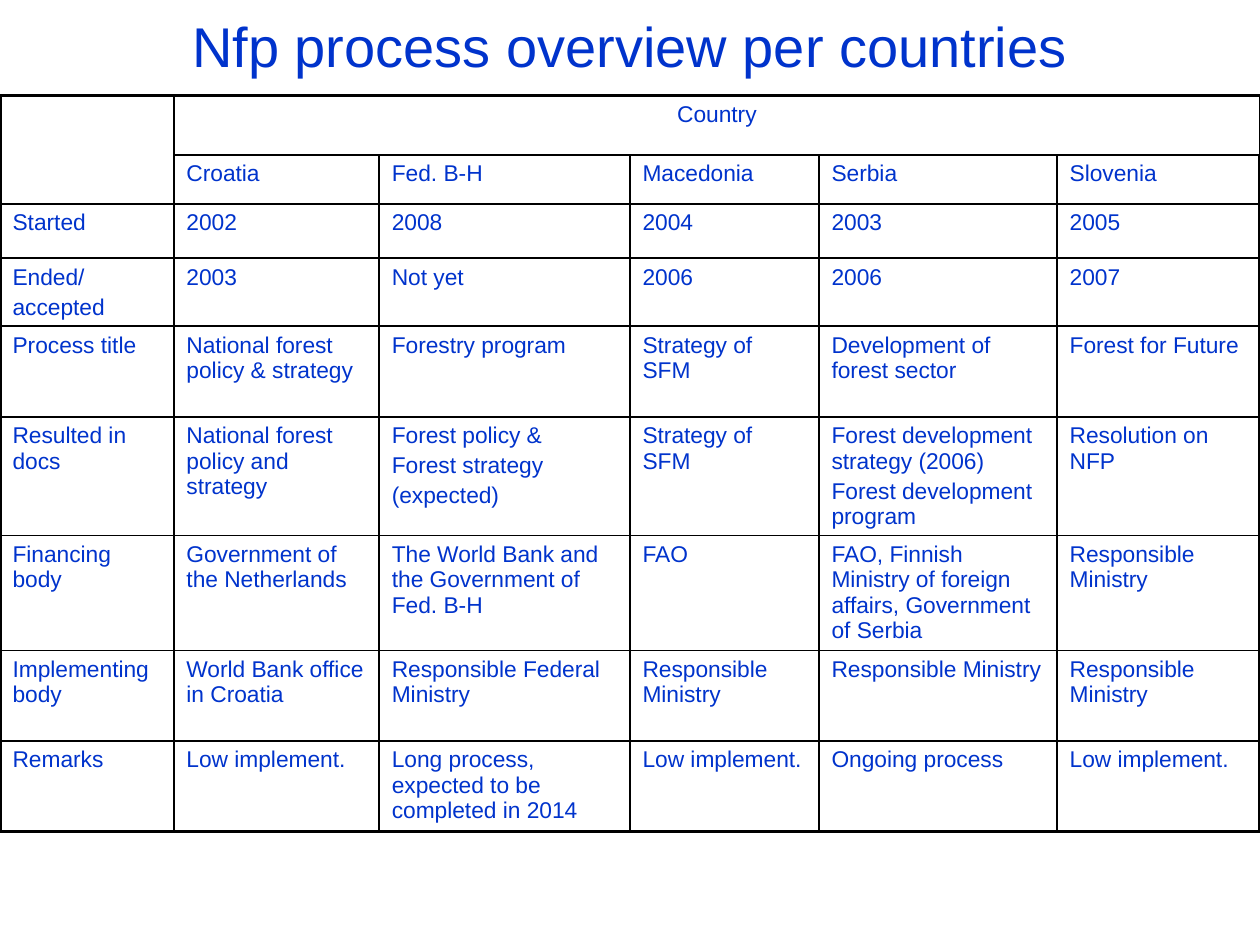
from lxml.etree import SubElement
from pptx import Presentation
from pptx.dml.color import RGBColor
from pptx.enum.text import MSO_ANCHOR, PP_ALIGN
from pptx.oxml.ns import qn
from pptx.util import Inches, Pt

COLORS = {"text": "0033CC", "border": "000000"}
FONT = "Arial"
THICK, THIN = 2.25, 1
COL_WIDTHS = [1.38, 1.63, 1.99, 1.5, 1.89, 1.61]
ROW_HEIGHTS = [0.47, 0.39, 0.43, 0.54, 0.72, 0.94, 0.91, 0.72, 0.72]
ROWS = [
    ["", "Country", "", "", "", ""],
    ["", "Croatia", "Fed. B-H", "Macedonia", "Serbia", "Slovenia"],
    ["Started", "2002", "2008", "2004", "2003", "2005"],
    ["Ended/\naccepted", "2003", "Not yet", "2006", "2006", "2007"],
    ["Process title", "National forest policy & strategy", "Forestry program",
     "Strategy of SFM", "Development of forest sector", "Forest for Future"],
    ["Resulted in docs", "National forest policy and strategy",
     "Forest policy &\nForest strategy\n(expected)", "Strategy of SFM",
     "Forest development strategy (2006)\nForest development program",
     "Resolution on NFP"],
    ["Financing body", "Government of the Netherlands",
     "The World Bank and the Government of Fed. B-H", "FAO",
     "FAO, Finnish Ministry of foreign affairs, Government of Serbia",
     "Responsible Ministry"],
    ["Implementing body", "World Bank office in Croatia",
     "Responsible Federal Ministry"] + ["Responsible Ministry"] * 3,
    ["Remarks", "Low implement.", "Long process, expected to be completed in 2014",
     "Low implement.", "Ongoing process", "Low implement."],
]


def format_paragraph(p, size, align=PP_ALIGN.LEFT, before=0):
    p.alignment = align
    p.space_before = Pt(before)
    p.font.name = FONT
    p.font.size = Pt(size)
    p.font.color.rgb = RGBColor.from_string(COLORS["text"])


def add_title(s, text):
    title = s.shapes.title
    title.left, title.top = Inches(0.5), Inches(0.05)
    title.width, title.height = Inches(9), Inches(0.61)
    tf = title.text_frame
    tf.text = text
    tf.vertical_anchor = MSO_ANCHOR.MIDDLE
    format_paragraph(tf.paragraphs[0], 32, PP_ALIGN.CENTER)


def set_borders(cell, row, col):
    """Thick lines round the table, thin lines between cells."""
    outer = {"L": col == 0, "R": col == len(COL_WIDTHS) - 1,
             "T": row == 0, "B": row == len(ROWS) - 1}
    tcPr = cell._tc.get_or_add_tcPr()
    for side, is_outer in outer.items():
        if cell.is_spanned and not is_outer:
            continue
        ln = SubElement(tcPr, qn(f"a:ln{side}"),
                        w=str(Pt(THICK if is_outer else THIN)))
        fill = SubElement(ln, qn("a:solidFill"))
        SubElement(fill, qn("a:srgbClr"), val=COLORS["border"])


def add_overview_table(s):
    frame = s.shapes.add_table(len(ROWS), len(COL_WIDTHS), 0, Inches(0.76),
                               Inches(10), Inches(sum(ROW_HEIGHTS)))
    table = frame.table
    table.first_row = table.horz_banding = False
    for column, width in zip(table.columns, COL_WIDTHS):
        column.width = Inches(width)
    for row, height in zip(table.rows, ROW_HEIGHTS):
        row.height = Inches(height)
    table.cell(0, 0).merge(table.cell(1, 0))
    table.cell(0, 1).merge(table.cell(0, len(COL_WIDTHS) - 1))
    for r, texts in enumerate(ROWS):
        for c, text in enumerate(texts):
            cell = table.cell(r, c)
            cell.text = text
            align = PP_ALIGN.CENTER if r == 0 else PP_ALIGN.LEFT
            for p in cell.text_frame.paragraphs:
                format_paragraph(p, 13, align, before=2.6)
            set_borders(cell, r, c)
            cell.fill.background()


def main():
    prs = Presentation()
    prs.slide_width, prs.slide_height = Inches(10), Inches(7.5)
    s = prs.slides.add_slide(prs.slide_layouts[5])
    add_title(s, "Nfp process overview per countries")
    add_overview_table(s)
    prs.save("out.pptx")


if __name__ == "__main__":
    main()
